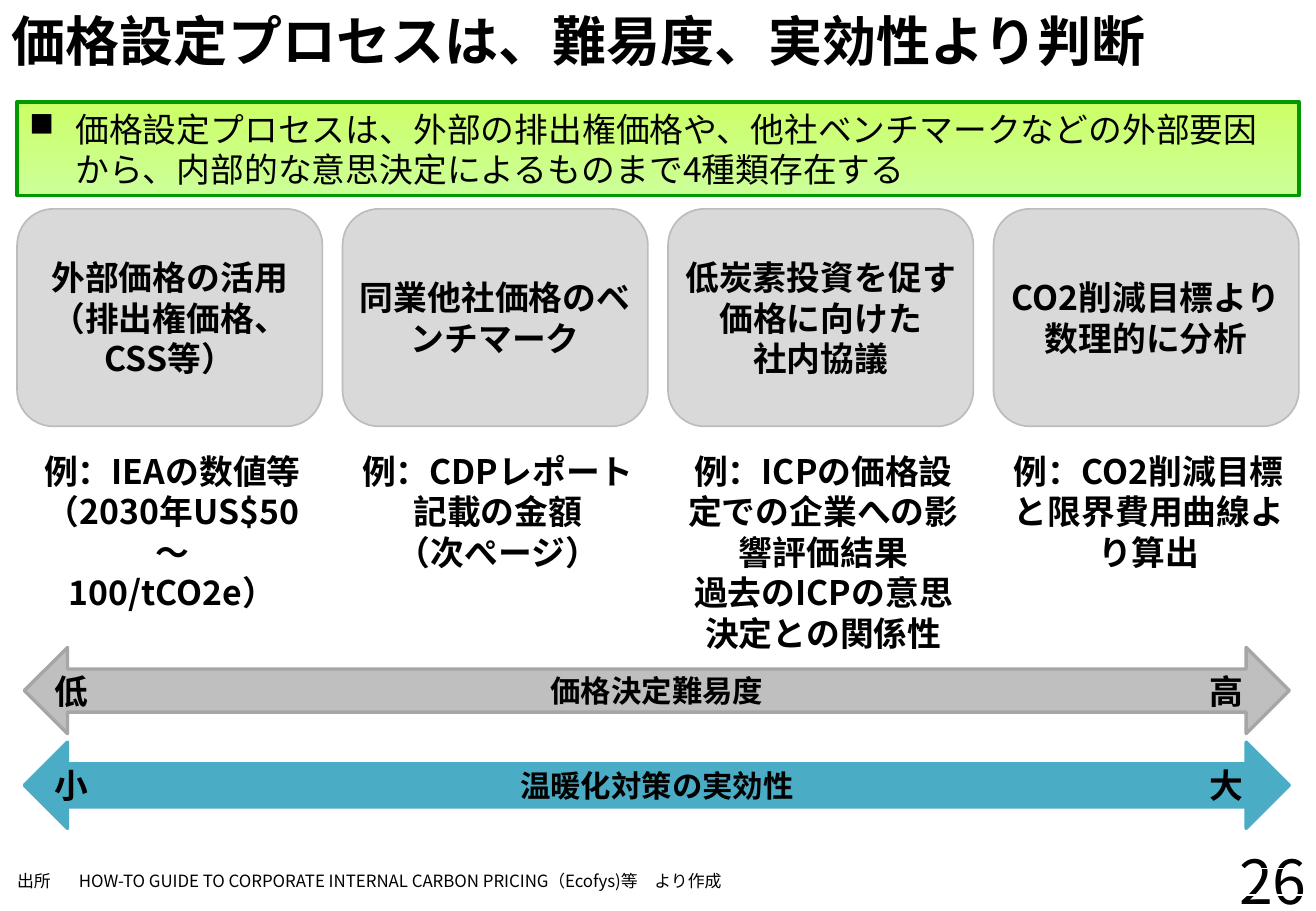
from dataclasses import dataclass

from lxml import etree
from pptx import Presentation
from pptx.dml.color import RGBColor
from pptx.enum.shapes import MSO_SHAPE as Preset
from pptx.enum.text import MSO_ANCHOR as Anchor, PP_ALIGN as Align
from pptx.oxml.ns import qn
from pptx.util import Inches, Pt

TITLE = "価格設定プロセスは、難易度、実効性より判断"
SUMMARY = ("価格設定プロセスは、外部の排出権価格や、他社ベンチマークなどの外部要因"
           "から、内部的な意思決定によるものまで4種類存在する")
METHODS = [
    (["外部価格の活用", "（排出権価格、CSS等）"],
     ["例：IEAの数値等（2030年US$50～", "100/tCO2e）"]),
    (["同業他社価格のベンチマーク"],
     ["例：CDPレポート記載の金額", "（次ぺージ）"]),
    (["低炭素投資を促す", "価格に向けた", "社内協議"],
     ["例：ICPの価格設定での企業への影響評価結果", "過去のICPの意思決定との関係性"]),
    (["CO2削減目標より数理的に分析"],
     ["例：CO2削減目標と限界費用曲線より算出"]),
]
SCALES = [
    ("低", "価格決定難易度", "高", "BFBFBF", "A6A6A6"),
    ("小", "温暖化対策の実効性", "大", "4BACC6", "4BACC6"),
]
SOURCE = ["出所", "HOW-TO GUIDE TO CORPORATE INTERNAL CARBON PRICING（Ecofys)等　より作成"]
PAGE = "26"


@dataclass(frozen=True)
class Theme:
    font: str = "Noto Sans CJK JP"
    ink: str = "000000"
    card: str = "D9D9D9"
    card_edge: str = "BBBCBC"
    summary_bottom: str = "CCFF99"
    summary_top: str = "CCFF66"
    summary_edge: str = "009900"
    title_size: int = 32
    page_size: int = 36
    body_size: int = 20
    scale_size: int = 18
    source_size: int = 10


THEME = Theme()
WIDTH, HEIGHT = Inches(10.83), Inches(7.5)
MARGIN, SPAN = 1.3, 97.4
CARD_WIDTH = 23.2
CARD_PITCH = (SPAN - CARD_WIDTH) / (len(METHODS) - 1)
SCALE_TOP, SCALE_PITCH, SCALE_HEIGHT = 71.07, 10.4, 9.47
END_WIDTH, END_HEIGHT = 9.7, 7.07

deck = Presentation()
deck.slide_width, deck.slide_height = WIDTH, HEIGHT
slide = deck.slides.add_slide(deck.slide_layouts[6])


def area(left, top, width, height):
    return [round(share * side / 100) for share, side in
            zip((left, top, width, height), (WIDTH, HEIGHT, WIDTH, HEIGHT))]


def write(frame, text, size=THEME.body_size, bold=False, align=Align.LEFT,
          anchor=Anchor.TOP, inset=None, bullet=None):
    frame.word_wrap = True
    frame.vertical_anchor = anchor
    if inset is not None:
        frame.margin_left = frame.margin_right = Inches(inset)
        frame.margin_top = frame.margin_bottom = Inches(inset)
    for index, line in enumerate([text] if isinstance(text, str) else text):
        paragraph = frame.add_paragraph() if index else frame.paragraphs[0]
        paragraph.alignment = align
        if bullet:
            layout = paragraph._p.get_or_add_pPr()
            indent = Inches(0.38)
            layout.set("marL", str(indent))
            layout.set("indent", str(-indent))
            etree.SubElement(layout, qn("a:buChar")).set("char", bullet)
        run = paragraph.add_run()
        run.text = line
        run.font.size, run.font.bold = Pt(size), bold
        run.font.color.rgb = RGBColor.from_string(THEME.ink)
        run.font.name = THEME.font
        etree.SubElement(run._r.rPr, qn("a:ea")).set("typeface", THEME.font)


def add_text(box, text, **style):
    write(slide.shapes.add_textbox(*box).text_frame, text, **style)


def add_panel(preset, box, fill, edge, edge_width, text, **style):
    panel = slide.shapes.add_shape(preset, *box)
    panel.shadow.inherit = False
    if isinstance(fill, str):
        panel.fill.solid()
        panel.fill.fore_color.rgb = RGBColor.from_string(fill)
    else:
        panel.fill.gradient()
        panel.fill.gradient_angle = 90
        for stop, color in zip(panel.fill.gradient_stops, fill):
            stop.color.rgb = RGBColor.from_string(color)
    panel.line.color.rgb = RGBColor.from_string(edge)
    panel.line.width = Pt(edge_width)
    write(panel.text_frame, text, anchor=Anchor.MIDDLE, **style)


add_text(area(0, 0.13, 100, 5.87), TITLE, size=THEME.title_size, bold=True)
add_panel(Preset.RECTANGLE, area(MARGIN, 11.2, SPAN, 10.27),
          (THEME.summary_bottom, THEME.summary_top), THEME.summary_edge, 2.25,
          SUMMARY, bullet="■")
add_text(area(87.8, 92, 12.4, 8), PAGE, size=THEME.page_size, align=Align.RIGHT)

for column, (method, example) in enumerate(METHODS):
    left = MARGIN + column * CARD_PITCH
    add_panel(Preset.ROUNDED_RECTANGLE, area(left, 22.93, CARD_WIDTH, 23.87),
              THEME.card, THEME.card_edge, 1, method,
              bold=True, align=Align.CENTER, inset=0.04)
    add_text(area(left + 0.1, 48.8, CARD_WIDTH + 0.2, 20), example,
             bold=True, align=Align.CENTER)

for row, (low, measure, high, fill, edge) in enumerate(SCALES):
    top = SCALE_TOP + row * SCALE_PITCH
    add_panel(Preset.LEFT_RIGHT_ARROW, area(1.85, top, 96.12, SCALE_HEIGHT),
              fill, edge, 2, measure,
              size=THEME.scale_size, bold=True, align=Align.CENTER)
    for end, left in ((low, 0.55), (high, 88.37)):
        add_text(area(left, top + (SCALE_HEIGHT - END_HEIGHT) / 2, END_WIDTH, END_HEIGHT),
                 end, bold=True, align=Align.CENTER, anchor=Anchor.MIDDLE)

source = slide.shapes.add_table(1, 2, *area(MARGIN, 95.33, 98.7, 2.93)).table
source.first_row = source.horz_banding = False
for column, (text, share) in enumerate(zip(SOURCE, (4.7, 94))):
    source.columns[column].width = round(WIDTH * share / 100)
    cell = source.cell(0, column)
    cell.fill.background()
    cell.margin_left = cell.margin_right = cell.margin_top = cell.margin_bottom = 0
    write(cell.text_frame, text, size=THEME.source_size, inset=0)

deck.save("out.pptx")
